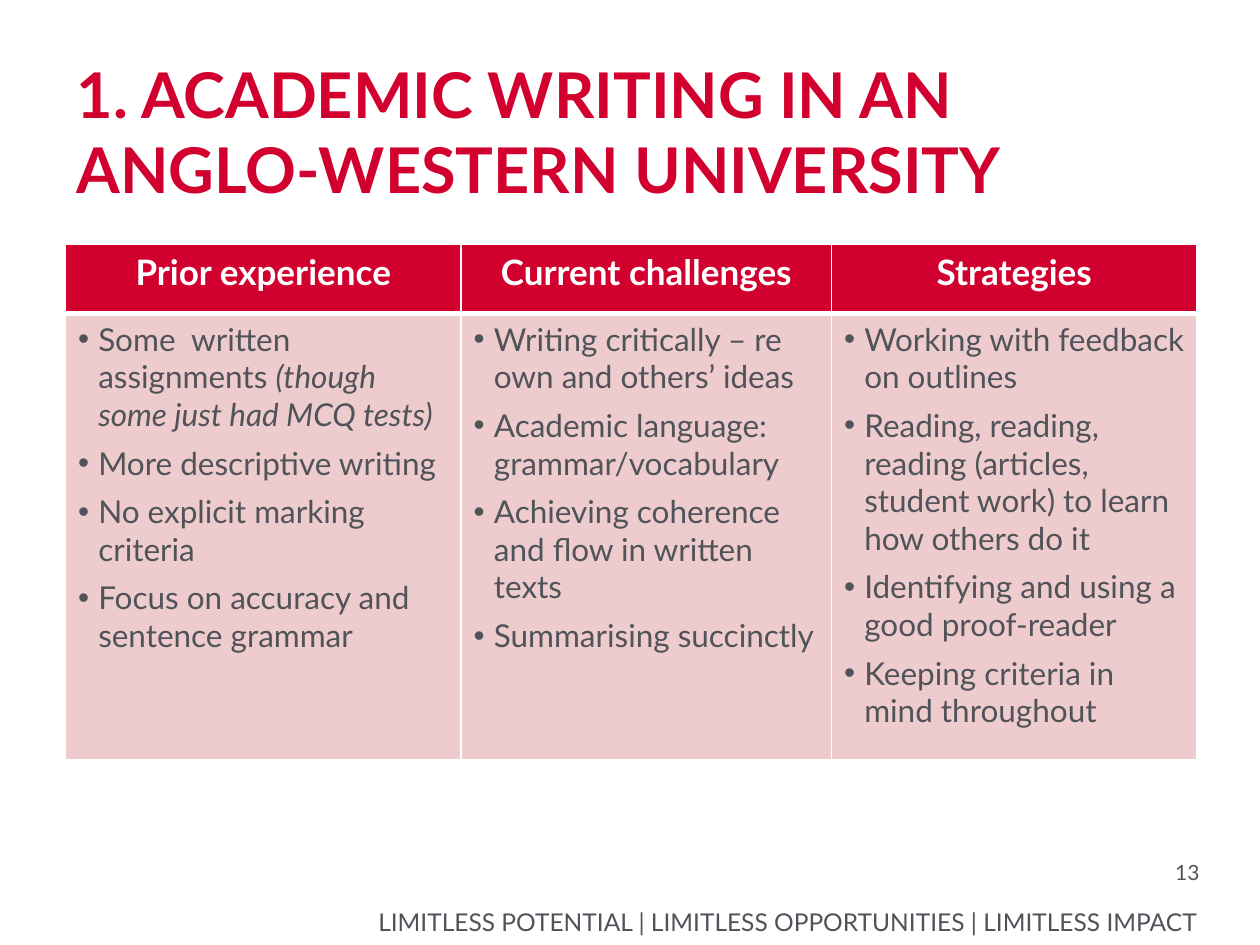
from lxml import etree
from pptx import Presentation
from pptx.dml.color import RGBColor
from pptx.enum.text import MSO_ANCHOR, PP_ALIGN
from pptx.oxml.ns import qn
from pptx.util import Inches, Pt

LEFT, CENTER, RIGHT = PP_ALIGN.LEFT, PP_ALIGN.CENTER, PP_ALIGN.RIGHT
TOP, BOTTOM = MSO_ANCHOR.TOP, MSO_ANCHOR.BOTTOM
RED = RGBColor(0xD2, 0x00, 0x2E)
PINK = RGBColor(0xEE, 0xCC, 0xCD)
GREY = RGBColor(0x50, 0x53, 0x5A)
WHITE = RGBColor(0xFF, 0xFF, 0xFF)
FONT = "Lato"

# Content: each bullet is plain text plus an optional italic ending
TITLE = "1. ACADEMIC WRITING IN AN ANGLO-WESTERN UNIVERSITY"
PAGE_NUMBER = "13"
TAGLINE = "LIMITLESS POTENTIAL\u2002|\u2002LIMITLESS OPPORTUNITIES\u2002|\u2002LIMITLESS IMPACT".replace("\u2002", " ")
COLUMNS = [
    ("Prior experience", 3.14, [
        ("Some  written assignments ", "(though some just had MCQ tests)"),
        ("More descriptive writing",),
        ("No explicit marking criteria",),
        ("Focus on accuracy and sentence grammar",),
    ]),
    ("Current challenges", 2.94, [
        ("Writing critically – re own and others’ ideas",),
        ("Academic language: grammar/vocabulary",),
        ("Achieving coherence and flow in written texts",),
        ("Summarising succinctly",),
    ]),
    ("Strategies", 2.9, [
        ("Working with feedback on outlines",),
        ("Reading, reading, reading (articles, student work) to learn how others do it",),
        ("Identifying and using a good proof-reader",),
        ("Keeping criteria in mind throughout",),
    ]),
]
ROW_HEIGHTS = (0.55, 3.54)


def style(font, size, color, bold=False, italic=False):
    font.name, font.size, font.bold, font.italic = FONT, Pt(size), bold, italic
    font.color.rgb = color


def add_text(page, text, place, size, color, align=LEFT, anchor=TOP, bold=False, inset=True):
    box = page.shapes.add_textbox(*(Inches(value) for value in place))
    frame = box.text_frame
    frame.word_wrap = True
    frame.vertical_anchor = anchor
    if not inset:
        frame.margin_left = frame.margin_right = frame.margin_top = frame.margin_bottom = 0
    para = frame.paragraphs[0]
    para.text = text
    para.alignment = align
    style(para.runs[0].font, size, color, bold)


def add_bullet(para, parts):
    properties = para._p.get_or_add_pPr()
    properties.set("marL", str(Inches(0.16)))
    properties.set("indent", str(-Inches(0.16)))
    para.space_after = Pt(6)
    etree.SubElement(properties, qn("a:buFont"), typeface="Arial")
    etree.SubElement(properties, qn("a:buChar"), char="•")
    for index, text in enumerate(parts):
        span = para.add_run()
        span.text = text
        style(span.font, 18, GREY, italic=index > 0)


def paint_cell(cell, color, top, bottom):
    """Give the cell white borders and a solid fill."""
    properties = cell._tc.get_or_add_tcPr()
    for side, width in (("L", 1), ("R", 1), ("T", top), ("B", bottom)):
        line = etree.SubElement(properties, qn(f"a:ln{side}"), w=str(Pt(width)))
        fill = etree.SubElement(line, qn("a:solidFill"))
        etree.SubElement(fill, qn("a:srgbClr"), val=str(WHITE))
    cell.fill.solid()
    cell.fill.fore_color.rgb = color


def add_comparison(page):
    width = sum(column[1] for column in COLUMNS)
    table = page.shapes.add_table(
        len(ROW_HEIGHTS), len(COLUMNS), Inches(0.52), Inches(1.94),
        Inches(width), Inches(sum(ROW_HEIGHTS))).table
    for row, height in zip(table.rows, ROW_HEIGHTS):
        row.height = Inches(height)
    for index, (heading, column_width, bullets) in enumerate(COLUMNS):
        table.columns[index].width = Inches(column_width)
        head, body = table.cell(0, index), table.cell(1, index)

        paint_cell(head, RED, 1, 3)
        para = head.text_frame.paragraphs[0]
        para.text = heading
        para.alignment = CENTER
        style(para.runs[0].font, 20, WHITE, bold=True)

        paint_cell(body, PINK, 3, 1)
        frame = body.text_frame
        for number, parts in enumerate(bullets):
            add_bullet(frame.add_paragraph() if number else frame.paragraphs[0], parts)


def main():
    deck = Presentation()
    deck.slide_width, deck.slide_height = Inches(10), Inches(7.5)
    page = deck.slides.add_slide(deck.slide_layouts[6])

    # Footer
    add_text(page, TAGLINE, (2.11, 7.19, 7.4, 0.24), 14, GREY, RIGHT, BOTTOM, inset=False)
    add_text(page, PAGE_NUMBER, (8.78, 6.82, 0.74, 0.28), 12, GREY, RIGHT, inset=False)

    # Title and table
    add_text(page, TITLE, (0.51, 0.39, 7.88, 1.31), 36, RED, bold=True)
    add_comparison(page)

    deck.save("out.pptx")


if __name__ == "__main__":
    main()
